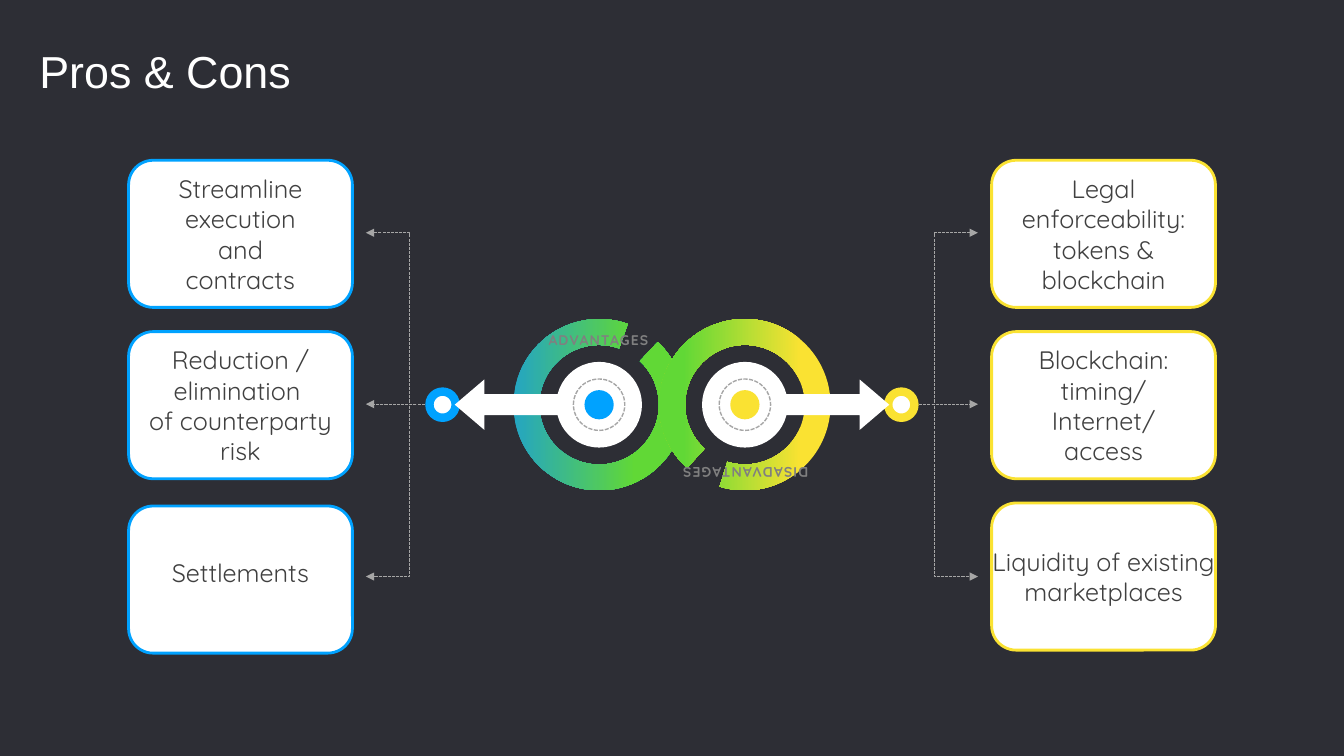
from lxml import etree
from pptx import Presentation
from pptx.dml.color import RGBColor
from pptx.enum.dml import MSO_LINE
from pptx.enum.shapes import MSO_CONNECTOR, MSO_SHAPE
from pptx.enum.text import MSO_ANCHOR, MSO_AUTO_SIZE, PP_ALIGN
from pptx.oxml.ns import qn
from pptx.util import Inches, Pt

ELBOW = MSO_CONNECTOR.ELBOW
ROUNDED, OVAL = MSO_SHAPE.ROUNDED_RECTANGLE, MSO_SHAPE.OVAL
ARC, ARROW = MSO_SHAPE.BLOCK_ARC, MSO_SHAPE.DOWN_ARROW
DASH = MSO_LINE.SQUARE_DOT
TOP, MIDDLE = MSO_ANCHOR.TOP, MSO_ANCHOR.MIDDLE
LEFT, CENTER = PP_ALIGN.LEFT, PP_ALIGN.CENTER
NO_FIT = MSO_AUTO_SIZE.NONE

DARK, WHITE, BLUE, YELLOW = "2D2E35", "FFFFFF", "00A2FF", "FAE232"
TEAL, GREEN, GRAY, LABEL_GRAY, INK = "24A5C2", "61D836", "A6A6A6", "808080", "404040"

COLUMNS, ROWS = 133.3, 75
AXIS, WAIST = 66.65, 40.15
CARD_OFFSET, HUB_OFFSET = 42.8, 7.23


def color(value):
    """Return the colour for a hex string."""
    return RGBColor.from_string(value)


def apply(target, values):
    """Set each named attribute on the target."""
    for name, value in values.items():
        setattr(target, name, value)


class SlideBuilder:
    """Holds the style and the slide, and draws elements centred on grid points."""

    card_font = {"name": "Quicksand", "size": Pt(18)}
    label_font = {"name": "Quicksand", "size": Pt(10), "bold": True}
    title_font = {"name": "Arial", "size": Pt(32)}

    def __init__(self, presentation):
        """Add a title-only slide with a dark background."""
        self.column = presentation.slide_width / COLUMNS
        self.row = presentation.slide_height / ROWS
        self.slide = presentation.slides.add_slide(presentation.slide_layouts[5])
        self.slide.background.fill.solid()
        self.slide.background.fill.fore_color.rgb = color(DARK)

    def frame(self, x, y, width, height):
        """Return the frame in slide units around a centre in grid units."""
        return (round((x - width / 2) * self.column), round((y - height / 2) * self.row),
                round(width * self.column), round(height * self.row))

    def set_text(self, shape, text, font, ink, alignment, anchor, inset, wrap=True):
        """Put formatted text in a shape."""
        text_frame = shape.text_frame
        apply(text_frame, {"auto_size": NO_FIT, "word_wrap": wrap, "vertical_anchor": anchor})
        sides = ("left", "right", "top", "bottom")
        apply(text_frame, {f"margin_{side}": Inches(inset) for side in sides})
        paragraph = text_frame.paragraphs[0]
        paragraph.text = text
        paragraph.alignment = alignment
        for run in paragraph.runs:
            apply(run.font, font)
            run.font.color.rgb = color(ink)
        return paragraph

    def title(self, text, x, y, width, height):
        """Move and format the title placeholder."""
        shape = self.slide.shapes.title
        places = self.frame(x, y, width, height)
        apply(shape, dict(zip(("left", "top", "width", "height"), places)))
        self.set_text(shape, text, self.title_font, WHITE, LEFT, TOP, 0.07)

    def shape(self, kind, x, y, width, height, fill=None, line=None, weight=1,
              dash=None, rotation=0, adjustments=(), gradient=()):
        """Draw a preset shape with a plain, gradient or empty fill."""
        shape = self.slide.shapes.add_shape(kind, *self.frame(x, y, width, height))
        shape.shadow.inherit = False
        shape.rotation = rotation
        for index, value in enumerate(adjustments):
            shape.adjustments[index] = value
        if gradient:
            shape.fill.gradient()
            shape.fill.gradient_angle = 180
            for stop, (position, value) in zip(shape.fill.gradient_stops, gradient):
                stop.position = position
                stop.color.rgb = color(value)
        elif fill:
            shape.fill.solid()
            shape.fill.fore_color.rgb = color(fill)
        else:
            shape.fill.background()
        if line:
            shape.line.color.rgb = color(line)
            apply(shape.line, {"width": Pt(weight), "dash_style": dash})
        else:
            shape.line.fill.background()

    def card(self, x, y, text, text_width, text_height, border, spacing):
        """Draw a bordered card with its text."""
        self.shape(ROUNDED, x, y, 22.2, 14.6, WHITE, border, 2)
        box = self.slide.shapes.add_textbox(*self.frame(x, y, text_width, text_height))
        paragraph = self.set_text(box, text, self.card_font, INK, CENTER, MIDDLE, 0)
        paragraph.line_spacing = spacing

    def label(self, text, x, y, rotation):
        """Draw a spaced label on a ring."""
        box = self.slide.shapes.add_textbox(*self.frame(x, y, 14.8, 9))
        box.rotation = rotation
        self.set_text(box, text, self.label_font, LABEL_GRAY, CENTER, MIDDLE, 0.1, False)
        for properties in box.element.iter(qn("a:rPr")):
            properties.set("spc", "80")

    def connector(self, start_x, start_y, end_x, end_y):
        """Draw a dashed elbow arrow."""
        connector = self.slide.shapes.add_connector(
            ELBOW, round(start_x * self.column), round(start_y * self.row),
            round(end_x * self.column), round(end_y * self.row))
        connector.line.color.rgb = color(GRAY)
        apply(connector.line, {"width": Pt(0.75), "dash_style": DASH})
        properties = connector.element.spPr
        etree.SubElement(properties.find(qn("a:ln")), qn("a:tailEnd"), type="triangle")
        etree.SubElement(properties, qn("a:effectLst"))


SIDES = [
    {"sign": -1, "accent": BLUE, "label": "ADVANTAGES", "label_rise": -6.4,
     "arc_rotation": 180, "arrow_rotation": 90, "arc": (133.07, 109.49),
     "gradient": ((0, TEAL), (0.71, GREEN)),
     "cards": [(23.2, "Streamline execution and contracts", 14.6, 12.1, None),
               (40.2, "Reduction / elimination \vof counterparty risk", 21.3, 12.1, None),
               (57.5, "Settlements", 17.4, 1.7, Pt(11))]},
    {"sign": 1, "accent": YELLOW, "label": "DISADVANTAGES", "label_rise": 6.8,
     "arc_rotation": 0, "arrow_rotation": 270, "arc": (132.49, 107.08),
     "gradient": ((0.17, YELLOW), (0.86, GREEN)),
     "cards": [(23.2, "Legal enforceability: tokens & blockchain", 22.2, 12.1, None),
               (40.2, "Blockchain: timing/ Internet/ access", 17.8, 12.1, None),
               (57.2, "Liquidity of existing marketplaces", 22.2, 9.1, None)]},
]


def main():
    """Build and save the slide."""
    presentation = Presentation()
    apply(presentation, {"slide_width": Inches(13.33), "slide_height": Inches(7.5)})
    builder = SlideBuilder(presentation)
    builder.title("Pros & Cons", 38.95, 6.95, 71.5, 6.7)

    for side in SIDES:
        sign, accent = side["sign"], side["accent"]
        for y, text, width, height, spacing in side["cards"]:
            builder.card(AXIS + sign * CARD_OFFSET, y, text, width, height, accent, spacing)
        for end_y in (23.1, 40.1, 57.2):
            builder.connector(AXIS + sign * 21.65, 40.1, AXIS + sign * 30.35, end_y)
        builder.shape(OVAL, AXIS + sign * 22.75, WAIST, 2.6, 2.6, WHITE, accent, 6)

    for side in SIDES:
        start, end = side["arc"]
        builder.shape(ARC, AXIS + side["sign"] * HUB_OFFSET, WAIST, 17, 17,
                      rotation=side["arc_rotation"], gradient=side["gradient"],
                      adjustments=(start * 0.6, end * 0.6, 0.151))

    for side in SIDES:
        sign = side["sign"]
        hub = AXIS + sign * HUB_OFFSET
        builder.shape(ARROW, AXIS + sign * 14.5, WAIST, 5, 14.1, WHITE,
                      rotation=side["arrow_rotation"], adjustments=(0.417, 0.586))
        builder.shape(OVAL, hub, WAIST, 8.5, 8.5, WHITE)
        builder.label(side["label"], AXIS + sign * 7.3, WAIST + side["label_rise"],
                      180 - side["arc_rotation"])
        builder.shape(OVAL, hub, WAIST, 2.9, 2.9, side["accent"])
        builder.shape(OVAL, hub, WAIST, 5.1, 5.1, line=GRAY, dash=DASH)

    presentation.save("out.pptx")


if __name__ == "__main__":
    main()
